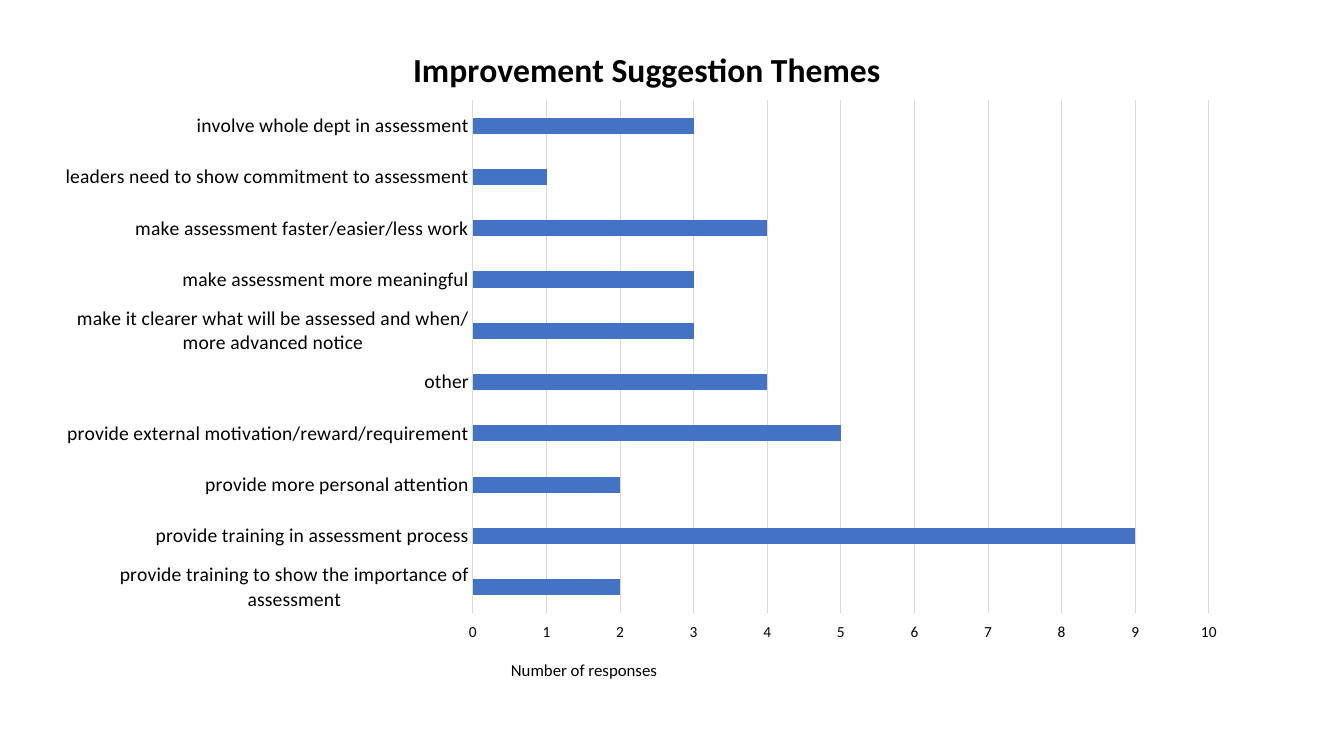
"""Build a slide with a bar chart of improvement suggestion themes."""
from typing import NamedTuple

from lxml.etree import SubElement
from pptx import Presentation
from pptx.chart.axis import CategoryAxis, ValueAxis
from pptx.chart.chart import Chart
from pptx.chart.data import CategoryChartData
from pptx.dml.color import RGBColor
from pptx.dml.line import LineFormat
from pptx.enum.chart import XL_CHART_TYPE as ChartType
from pptx.enum.chart import XL_TICK_LABEL_POSITION as LabelPosition
from pptx.enum.chart import XL_TICK_MARK as TickMark
from pptx.enum.text import MSO_AUTO_SIZE as AutoSize
from pptx.oxml.ns import qn
from pptx.oxml.xmlchemy import BaseOxmlElement
from pptx.slide import Slide
from pptx.text.text import Font
from pptx.util import Emu, Pt

EMU_PER_PX = 914400 / 100.8
FONT_NAME = "Calibri"
BLACK = RGBColor(0x00, 0x00, 0x00)
BLUE = RGBColor(0x44, 0x72, 0xC4)
GREY = RGBColor(0xD9, 0xD9, 0xD9)


class Box(NamedTuple):
    left: int
    top: int
    width: int
    height: int


class Theme(NamedTuple):
    label: str
    responses: int


SLIDE_BOX = Box(0, 0, 1344, 756)
CHART_BOX = Box(41, 18, 1200, 636)
TITLE_BOX = Box(407, 41, 467, 41)
PLOT_BOX = Box(473, 100, 736, 513)
CAPTION_BOX = Box(501, 655, 313, 30)

THEMES = [
    Theme("involve whole dept in assessment", 3),
    Theme("leaders need to show commitment to assessment", 1),
    Theme("make assessment faster/easier/less work", 4),
    Theme("make assessment more meaningful", 3),
    Theme("make it clearer what will be assessed and when/\nmore advanced notice", 3),
    Theme("other", 4),
    Theme("provide external motivation/reward/requirement", 5),
    Theme("provide more personal attention", 2),
    Theme("provide training in assessment process", 9),
    Theme("provide training to show the importance of assessment", 2),
]


def px(length: int) -> Emu:
    return Emu(round(length * EMU_PER_PX))


def emu_box(box: Box) -> list[Emu]:
    return [px(length) for length in box]


def style_font(font: Font, size: int, bold: bool = False) -> None:
    font.name = FONT_NAME
    font.size = Pt(size)
    font.bold = bold
    font.color.rgb = BLACK


def style_line(line: LineFormat) -> None:
    line.color.rgb = GREY
    line.width = Pt(0.75)


def set_layout(layout: BaseOxmlElement, settings: dict[str, str | float]) -> None:
    manual = SubElement(layout, qn("c:manualLayout"))
    for name, value in settings.items():
        SubElement(manual, qn(f"c:{name}")).set("val", str(value))


def edge_position(box: Box) -> dict[str, str | float]:
    return {
        "xMode": "edge",
        "yMode": "edge",
        "x": (box.left - CHART_BOX.left) / CHART_BOX.width,
        "y": (box.top - CHART_BOX.top) / CHART_BOX.height,
    }


def place_plot(chart: Chart) -> None:
    plot_area = chart.plots[0]._element.getparent()
    layout = plot_area.find(qn("c:layout"))
    if layout is None:
        layout = SubElement(plot_area, qn("c:layout"))
        plot_area.insert(0, layout)
    size = {
        "w": PLOT_BOX.width / CHART_BOX.width,
        "h": PLOT_BOX.height / CHART_BOX.height,
    }
    set_layout(layout, {"layoutTarget": "inner", **edge_position(PLOT_BOX), **size})


def add_chart_title(chart: Chart) -> None:
    title = chart.chart_title
    title.text_frame.text = "Improvement Suggestion Themes"
    style_font(title.text_frame.paragraphs[0].runs[0].font, 24, bold=True)
    layout = title._element.find(qn("c:layout"))
    if layout is None:
        layout = SubElement(title._element, qn("c:layout"))
        title._element.insert(1, layout)
    set_layout(layout, edge_position(TITLE_BOX))


def style_category_axis(axis: CategoryAxis) -> None:
    axis.reverse_order = True
    axis.major_tick_mark = TickMark.NONE
    axis.has_major_gridlines = False
    style_font(axis.tick_labels.font, 14)
    style_line(axis.format.line)


def style_value_axis(axis: ValueAxis) -> None:
    axis.minimum_scale = 0
    axis.maximum_scale = 10
    axis.major_unit = 1
    axis.major_tick_mark = TickMark.NONE
    axis.tick_label_position = LabelPosition.HIGH
    style_font(axis.tick_labels.font, 11)
    axis.format.line.fill.background()
    style_line(axis.major_gridlines.format.line)


def add_theme_chart(slide: Slide) -> None:
    data = CategoryChartData(number_format="General")
    data.categories = [theme.label for theme in THEMES]
    data.add_series("Series 1", [theme.responses for theme in THEMES])
    chart = slide.shapes.add_chart(
        ChartType.BAR_CLUSTERED, *emu_box(CHART_BOX), data
    ).chart
    chart.has_legend = False
    style_font(chart.font, 10)
    add_chart_title(chart)

    plot = chart.plots[0]
    plot.gap_width = 219
    plot.vary_by_categories = False
    bar_fill = plot.series[0].format.fill
    bar_fill.solid()
    bar_fill.fore_color.rgb = BLUE

    style_category_axis(chart.category_axis)
    style_value_axis(chart.value_axis)
    place_plot(chart)


def add_caption(slide: Slide) -> None:
    frame = slide.shapes.add_textbox(*emu_box(CAPTION_BOX)).text_frame
    frame.word_wrap = True
    frame.auto_size = AutoSize.SHAPE_TO_FIT_TEXT
    frame.text = "Number of responses"
    style_font(frame.paragraphs[0].runs[0].font, 12)


def main() -> None:
    deck = Presentation()
    deck.slide_width = px(SLIDE_BOX.width)
    deck.slide_height = px(SLIDE_BOX.height)
    slide = deck.slides.add_slide(deck.slide_layouts[6])
    add_theme_chart(slide)
    add_caption(slide)
    deck.save("out.pptx")


if __name__ == "__main__":
    main()
